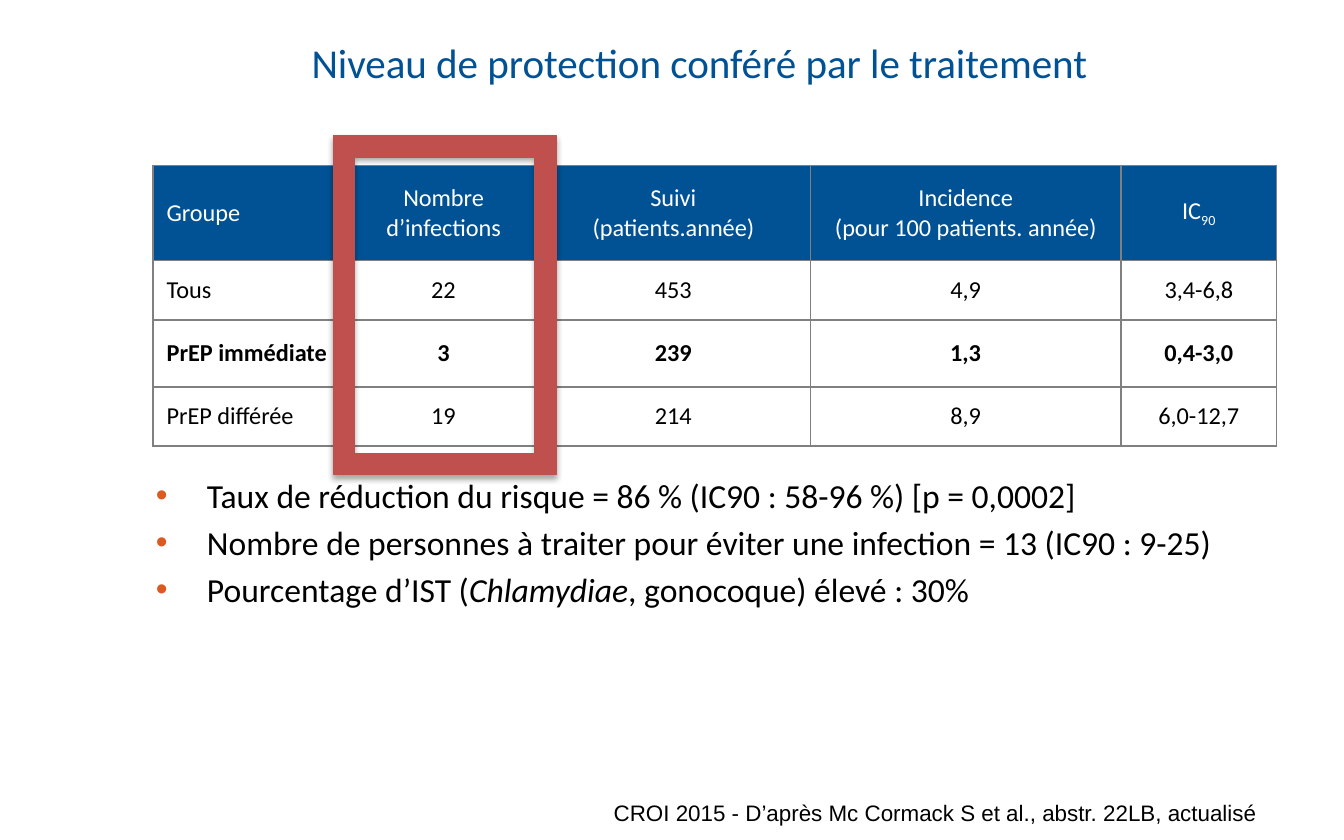
"""Build the slide on the level of protection given by the treatment."""
from lxml import etree
from pptx import Presentation, util as u
from pptx.dml.color import RGBColor
from pptx.enum import shapes, text
from pptx.oxml import parse_xml
from pptx.oxml.ns import nsdecls, qn

TITLE = "Niveau de protection conféré par le traitement"
HEADER = ["Groupe", "Nombre d’infections", "Suivi\n(patients.année)",
          "Incidence\n(pour 100 patients. année)", "IC"]
HEADER_SUBSCRIPT = "90"
ROWS = [
    ["Tous", "22", "453", "4,9", "3,4-6,8"],
    ["PrEP immédiate", "3", "239", "1,3", "0,4-3,0"],
    ["PrEP différée", "19", "214", "8,9", "6,0-12,7"],
]
BOLD_ROW = 2
FINDINGS = [
    [("Taux de réduction du risque = 86 % (IC90 : 58-96 %) [p = 0,0002]", {})],
    [("Nombre de personnes à traiter pour éviter une infection\u00a0= 13 (IC90 : 9-25)", {})],
    [("Pourcentage d’IST (", {}), ("Chlamydiae", {"italic": True}),
     (", gonocoque) élevé : 30%", {})],
]
CITATION = "CROI 2015 - D’après Mc Cormack S et al., abstr. 22LB, actualisé "

THEME = {
    "blue": "005294", "white": "FFFFFF", "black": "000000",
    "grid": "808080", "bullet": "DC5A20", "frame": "C0504D",
    "title": {"size": u.Pt(22), "name": "Calibri"},
    "body": {"size": u.Pt(18), "name": "Calibri"},
    "table": {"size": u.Pt(13), "name": "Calibri"},
    "citation": {"size": u.Pt(12), "name": "Arial"},
}
PLACES = {
    "title": (1.16, 0.22, 8.09, 0.55),
    "body": (1.16, 3.53, 8.34, 1.71),
    "table": (1.14, 1.23, 8.36, 2.09),
    "citation": (3.03, 5.83, 6.47, 0.43),
    "frame": (2.48, 1.01, 1.66, 2.52),
}
COLUMN_WIDTHS = [1.47, 1.38, 2.04, 2.31, 1.16]
ROW_HEIGHTS = [0.71, 0.44, 0.5, 0.44]
HANGING = u.Inches(0.38)


def color(name):
    return RGBColor.from_string(THEME[name])


def place(name):
    return [u.Inches(length) for length in PLACES[name]]


def apply(target, values):
    for name, value in values.items():
        setattr(target, name, value)


def move(shape, name):
    apply(shape, dict(zip(("left", "top", "width", "height"), place(name))))


def set_margins(target, across, down):
    apply(target, {"margin_left": u.Inches(across), "margin_right": u.Inches(across),
                   "margin_top": u.Inches(down), "margin_bottom": u.Inches(down)})


def write(para, spans, style, ink="black"):
    for content, extra in spans:
        for index, line in enumerate(content.split("\n")):
            if index:
                para.add_line_break()
            span = para.add_run()
            span.text = line
            apply(span.font, {**THEME[style], **extra})
            span.font.color.rgb = color(ink)


def add_title(page):
    title = page.shapes.title
    move(title, "title")
    box = title.text_frame
    set_margins(box, 0, 0)
    apply(box, {"vertical_anchor": text.MSO_ANCHOR.MIDDLE, "auto_size": text.MSO_AUTO_SIZE.NONE})
    para = box.paragraphs[0]
    apply(para, {"alignment": text.PP_ALIGN.CENTER, "line_spacing": u.Pt(22)})
    write(para, [(TITLE, {})], "title", "blue")


def add_findings(page):
    body = page.placeholders[1]
    move(body, "body")
    box = body.text_frame
    set_margins(box, 0, 0)
    box.auto_size = text.MSO_AUTO_SIZE.NONE
    for index, spans in enumerate(FINDINGS):
        para = box.add_paragraph() if index else box.paragraphs[0]
        write(para, spans, "body")
        props = para._p.get_or_add_pPr()
        props.set("marL", str(HANGING))
        props.set("indent", str(-HANGING))
        bullet_color = etree.SubElement(props, qn("a:buClr"))
        etree.SubElement(bullet_color, qn("a:srgbClr")).set("val", THEME["bullet"])
        etree.SubElement(props, qn("a:buChar")).set("char", "•")


def add_borders(cell):
    props = cell._tc.get_or_add_tcPr()
    for index, side in enumerate("LRTB"):
        props.insert(index, parse_xml(
            f'<a:ln{side} {nsdecls("a")} w="{u.Pt(1)}"><a:solidFill>'
            f'<a:srgbClr val="{THEME["grid"]}"/></a:solidFill></a:ln{side}>'))


def add_results(page):
    lines = [HEADER] + ROWS
    table = page.shapes.add_table(len(lines), len(HEADER), *place("table")).table
    for column, width in zip(table.columns, COLUMN_WIDTHS):
        column.width = u.Inches(width)
    for row, height in zip(table.rows, ROW_HEIGHTS):
        row.height = u.Inches(height)
    for r, line in enumerate(lines):
        for c, content in enumerate(line):
            cell = table.cell(r, c)
            set_margins(cell, 0.1, 0.04)
            cell.vertical_anchor = text.MSO_ANCHOR.MIDDLE
            cell.fill.solid()
            cell.fill.fore_color.rgb = color("white" if r else "blue")
            add_borders(cell)
            para = cell.text_frame.paragraphs[0]
            para.alignment = text.PP_ALIGN.CENTER if c else text.PP_ALIGN.LEFT
            write(para, [(content, {"bold": r == BOLD_ROW})], "table", "black" if r else "white")
    header_end = table.cell(0, len(HEADER) - 1).text_frame.paragraphs[0]
    write(header_end, [(HEADER_SUBSCRIPT, {"bold": False})], "table", "white")
    header_end.runs[-1].font._element.set("baseline", "-25000")


def add_citation(page):
    box = page.shapes.add_textbox(*place("citation")).text_frame
    apply(box, {"word_wrap": True, "vertical_anchor": text.MSO_ANCHOR.MIDDLE})
    para = box.paragraphs[0]
    para.alignment = text.PP_ALIGN.RIGHT
    write(para, [(CITATION, {})], "citation")


def add_highlight(page):
    frame = page.shapes.add_shape(shapes.MSO_SHAPE.FRAME, *place("frame"))
    frame.adjustments[0] = 0.095
    frame.fill.solid()
    frame.fill.fore_color.rgb = color("frame")
    frame.line.color.rgb = color("frame")
    frame.line.width = u.Pt(0.75)
    frame.shadow.inherit = False
    effects = frame._element.spPr.find(qn("a:effectLst"))
    effects.append(parse_xml(
        f'<a:outerShdw {nsdecls("a")} blurRad="{u.Pt(3.1)}" dist="{u.Pt(1.8)}" dir="5400000" '
        f'rotWithShape="0"><a:srgbClr val="{THEME["black"]}"><a:alpha val="35000"/>'
        '</a:srgbClr></a:outerShdw>'))


def main():
    deck = Presentation()
    apply(deck, {"slide_width": u.Inches(10), "slide_height": u.Inches(6.25)})
    page = deck.slides.add_slide(deck.slide_layouts[1])
    for add_part in (add_findings, add_title, add_results, add_citation, add_highlight):
        add_part(page)
    deck.save("out.pptx")


if __name__ == "__main__":
    main()
